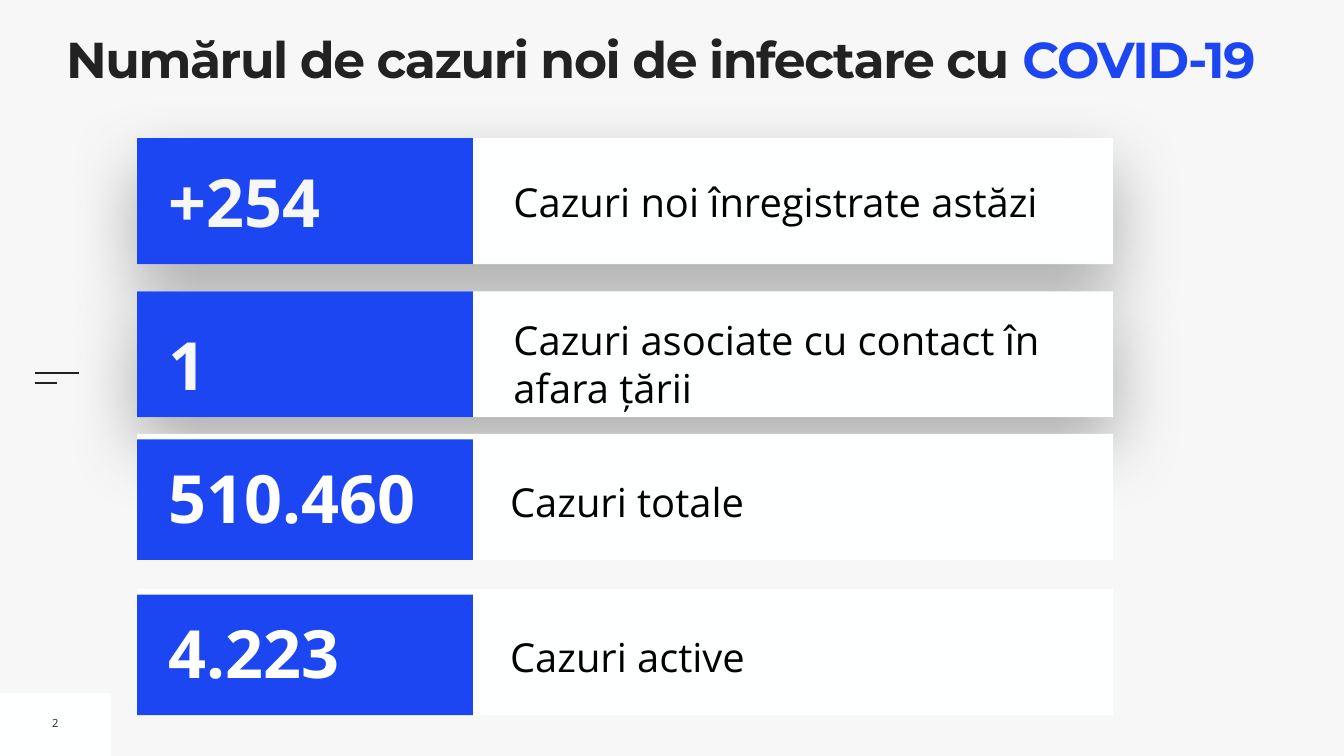
"""Build the slide with the daily COVID-19 case counts."""
import dataclasses

import lxml.etree
import pptx
import pptx.dml.color
import pptx.enum.shapes
import pptx.enum.text
import pptx.oxml.ns
import pptx.util
from pptx.util import Cm

ANCHOR = pptx.enum.text.MSO_ANCHOR
ALIGN = pptx.enum.text.PP_ALIGN


@dataclasses.dataclass(frozen=True)
class Theme:
    """Colours, fonts and type sizes of the slide."""
    background: str = "F7F7F7"
    card: str = "FEFFFF"
    accent: str = "1D46F3"
    ink: str = "222222"
    label: str = "000000"
    plain_value: str = "FFFFFF"
    heading_font: str = "Montserrat"
    body_font: str = "Open Sans"
    title_size: int = 72
    value_size: int = 95
    label_size: int = 57
    number_size: int = 16


@dataclasses.dataclass(frozen=True)
class Count:
    """One case count, its card's top in cm and its text's shift in cm."""
    value: str
    label: str
    top: float
    highlighted: bool = False
    shift: float = 0


THEME = Theme()
CARD_LEFT, CARD_HEIGHT = 6.91, 6.35
COUNTS = [
    Count("4.223", "Cazuri active", 29.69),
    Count("+254", "Cazuri noi înregistrate astăzi", 6.96, True),
    Count("1", "Cazuri asociate cu contact în afara țării", 14.68, True, 0.48),
    Count("510.460", "Cazuri totale", 21.87),
]


def rgb(colour):
    """Return the colour object of a hex value."""
    return pptx.dml.color.RGBColor.from_string(colour)


def style_run(run, font, size, colour, bold=False):
    """Give a run its font, size, colour and weight."""
    run.font.name = font
    run.font.size = pptx.util.Pt(size)
    run.font.color.rgb = rgb(colour)
    run.font.bold = bold


def set_insets(frame, inset):
    """Set the same inset on all four sides of a text frame."""
    frame.margin_left = frame.margin_right = Cm(inset)
    frame.margin_top = frame.margin_bottom = Cm(inset)


def add_panel(shapes, left, top, width, height, colour):
    """Add a plain filled rectangle, measured in cm."""
    panel = shapes.add_shape(pptx.enum.shapes.MSO_SHAPE.RECTANGLE,
                             Cm(left), Cm(top), Cm(width), Cm(height))
    panel.fill.solid()
    panel.fill.fore_color.rgb = rgb(colour)
    panel.line.fill.background()
    panel.shadow.inherit = False
    return panel


def cast_shadow(panel):
    """Let a panel cast a soft shadow downwards."""
    qn = pptx.oxml.ns.qn
    effects = panel.element.spPr.find(qn("a:effectLst"))
    shadow = lxml.etree.SubElement(
        effects, qn("a:outerShdw"), blurRad=str(pptx.util.Pt(100)),
        dist=str(pptx.util.Pt(40)), dir="5400000", algn="ctr", rotWithShape="0")
    black = lxml.etree.SubElement(shadow, qn("a:srgbClr"), val="000000")
    lxml.etree.SubElement(black, qn("a:alpha"), val="30000")


def add_text(shapes, text, left, middle, width, height, inset=0.25):
    """Add a text box centred vertically on a height in cm."""
    box = shapes.add_textbox(Cm(left), Cm(middle - height / 2), Cm(width), Cm(height))
    frame = box.text_frame
    frame.word_wrap = True
    frame.vertical_anchor = ANCHOR.MIDDLE
    set_insets(frame, inset)
    frame.text = text
    return frame


def add_count_card(slide, count, left, top, height):
    """Add a white card with its value on a blue panel and its label."""
    shapes = slide.shapes.add_group_shape().shapes
    middle = top + height / 2 + count.shift
    card = add_panel(shapes, left, top, 49.2, height, THEME.card)
    if count.highlighted:
        cast_shadow(card)
        label = add_text(shapes, count.label, left + 18.72, middle, 29.87, 5.38)
        strip, value_colour = 0, THEME.background
    else:
        label = add_text(shapes, count.label, left + 18.8, middle - 0.12, 29.41, 5.38, 0)
        label.paragraphs[0].line_spacing = 1.3
        label.paragraphs[0].space_before = pptx.util.Pt(20)
        strip, value_colour = 0.28, THEME.plain_value
    style_run(label.paragraphs[0].runs[0], THEME.body_font, THEME.label_size, THEME.label)
    add_panel(shapes, left, top + strip, 16.92, height - strip, THEME.accent)
    value = add_text(shapes, count.value, left + 1.35, middle, 15.32, 4.57)
    style_run(value.paragraphs[0].runs[0], THEME.body_font, THEME.value_size,
              value_colour, True)


def add_title(slide, left, top, width, height):
    """Fill the title placeholder and colour its last word."""
    title = slide.shapes.title
    title.left, title.top, title.width, title.height = map(Cm, (left, top, width, height))
    frame = title.text_frame
    frame.auto_size = pptx.enum.text.MSO_AUTO_SIZE.NONE
    frame.vertical_anchor = ANCHOR.TOP
    set_insets(frame, 0)
    heading = frame.paragraphs[0]
    heading.text = "Numărul de cazuri noi de infectare cu "
    heading.add_run().text = "COVID-19"
    heading.alignment = ALIGN.LEFT
    heading.line_spacing = 0.8
    for run, colour in zip(heading.runs, (THEME.ink, THEME.accent)):
        style_run(run, THEME.heading_font, THEME.title_size, colour, True)
        run.font._element.set("spc", "-200")


def add_menu_mark(slide, left, top):
    """Add the long and the short line at the left edge."""
    for drop, length in ((0, 2.24), (0.46, 1.12)):
        stroke = slide.shapes.add_connector(
            pptx.enum.shapes.MSO_CONNECTOR.STRAIGHT,
            Cm(left), Cm(top + drop), Cm(left + length), Cm(top + drop))
        stroke.line.color.rgb = rgb(THEME.ink)
        stroke.line.width = pptx.util.Pt(3)
        lxml.etree.SubElement(stroke.element.spPr, pptx.oxml.ns.qn("a:effectLst"))


def add_page_corner(slide, left, top, width, height):
    """Add the white corner with the page number."""
    add_panel(slide.shapes, left, top, width, height, THEME.card)
    number = add_text(slide.shapes, "2", left + 2.36, top + 1.49, 0.86, 1.3)
    number.word_wrap = False
    number.paragraphs[0].alignment = ALIGN.CENTER
    style_run(number.paragraphs[0].runs[0], THEME.body_font, THEME.number_size, THEME.ink)


def main():
    """Build and save the presentation."""
    deck = pptx.Presentation()
    deck.slide_width, deck.slide_height = Cm(67.74), Cm(38.1)
    slide = deck.slides.add_slide(deck.slide_layouts[5])
    slide.background.fill.solid()
    slide.background.fill.fore_color.rgb = rgb(THEME.background)
    add_page_corner(slide, 0, 34.95, 5.59, 3.15)
    add_menu_mark(slide, 1.75, 18.82)
    add_title(slide, 3.33, 1.98, 60.81, 4.01)
    for count in COUNTS:
        add_count_card(slide, count, CARD_LEFT, count.top, CARD_HEIGHT)
    deck.save("out.pptx")


if __name__ == "__main__":
    main()
